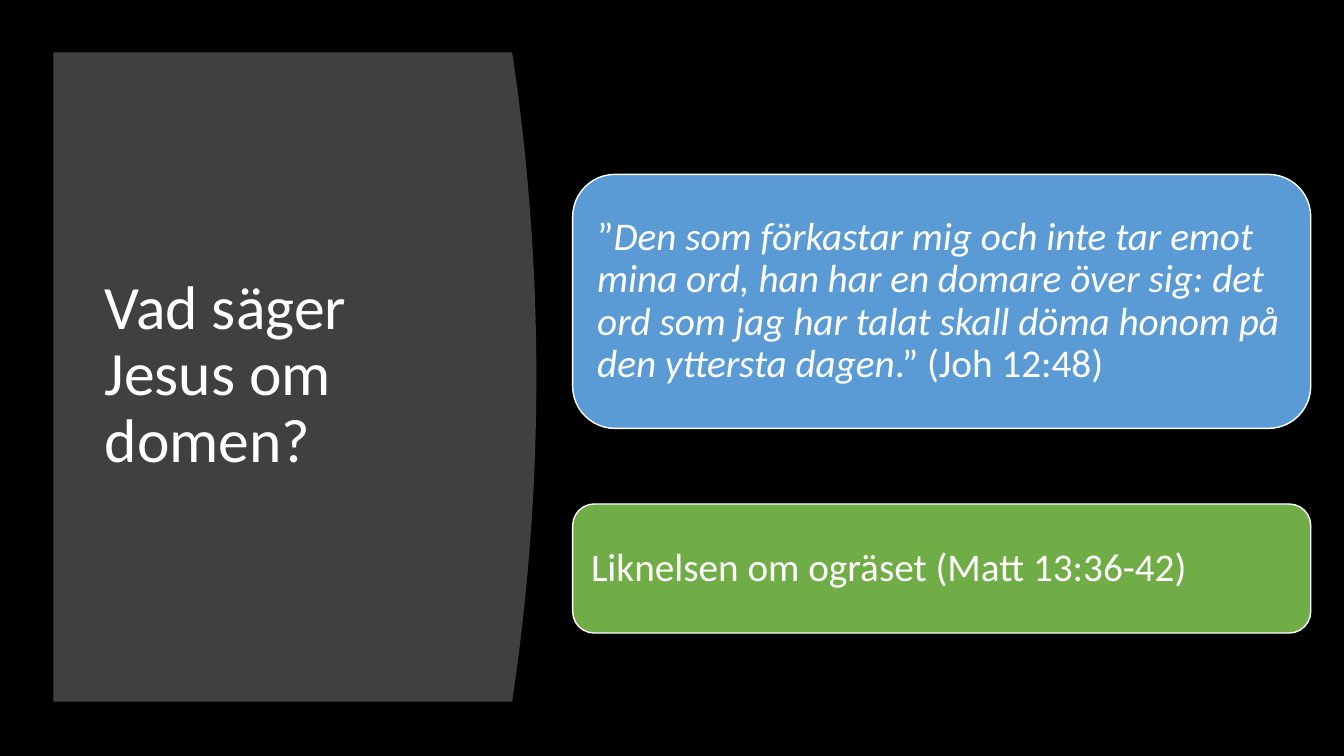
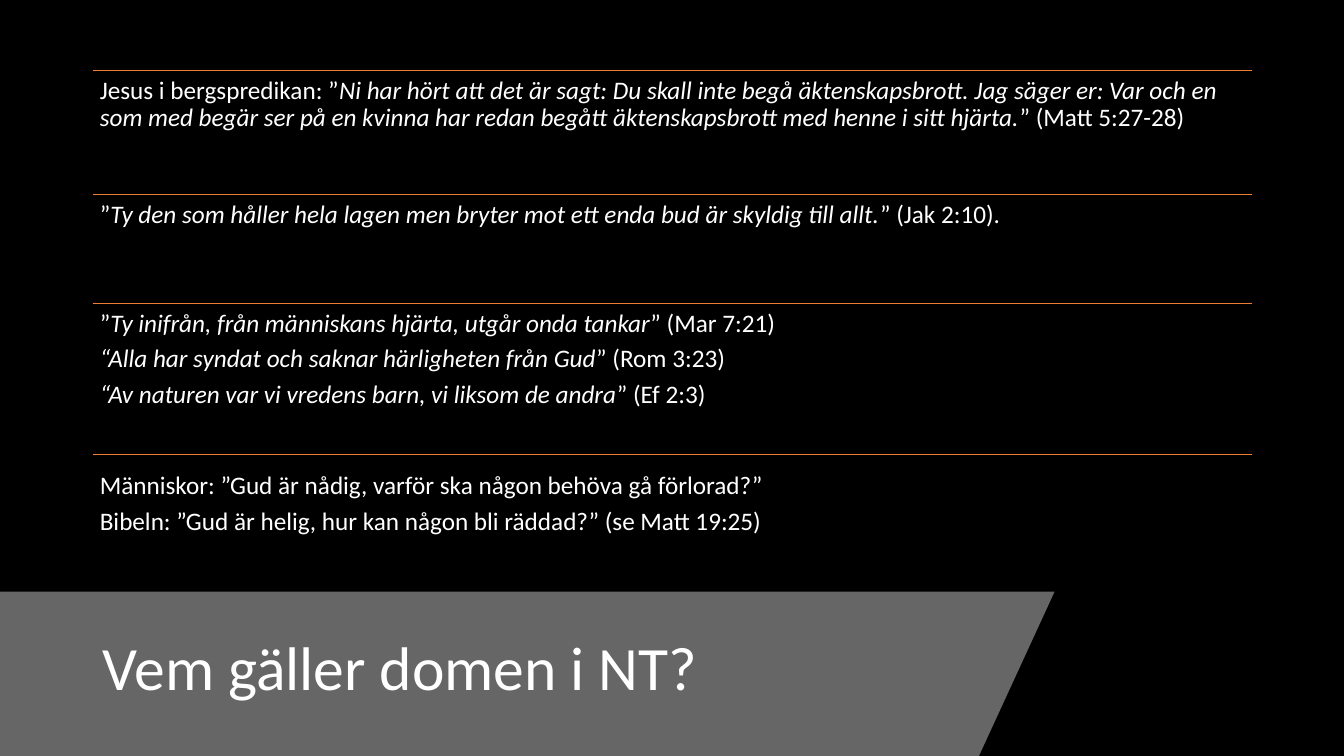
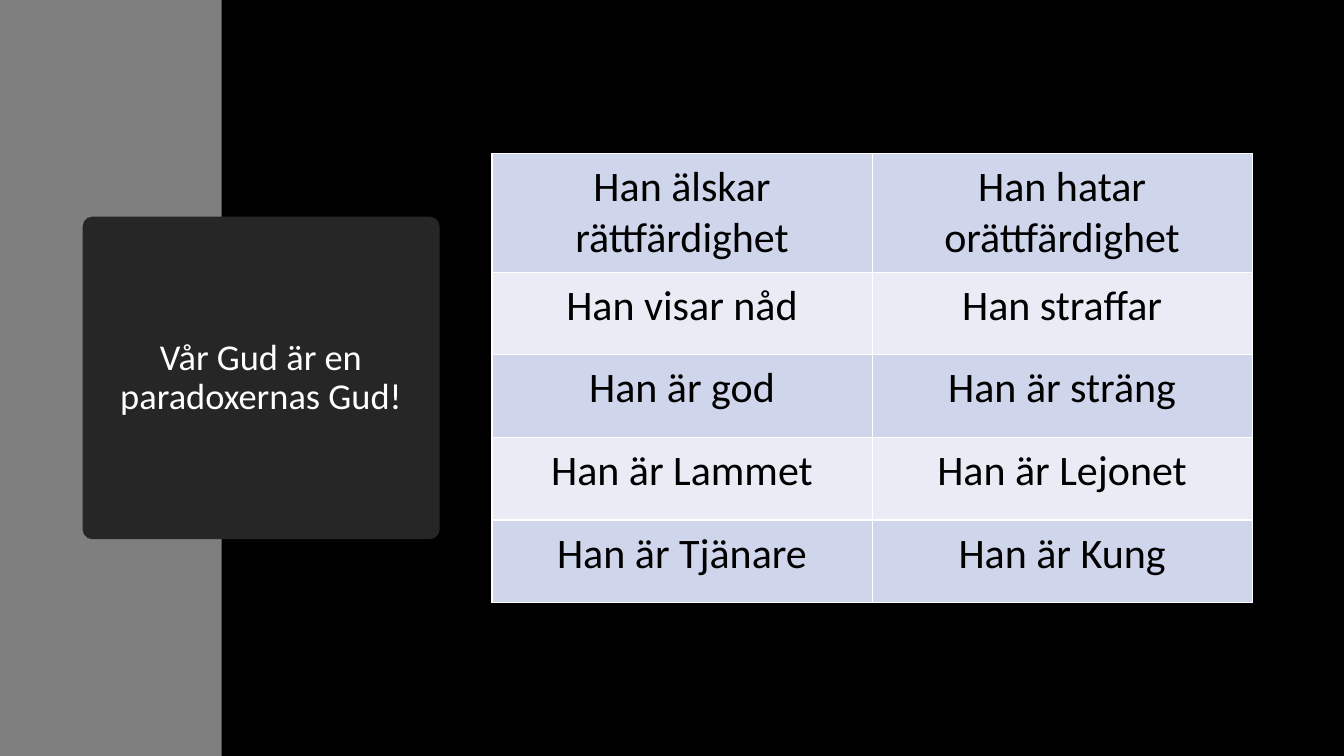
"""Build three dark slides about judgement and paradox in the Bible."""
from lxml.etree import SubElement
from pptx import Presentation
from pptx.dml.color import RGBColor
from pptx.enum.shapes import MSO_CONNECTOR, MSO_SHAPE
from pptx.enum.text import MSO_ANCHOR, PP_ALIGN
from pptx.oxml.ns import qn
from pptx.util import Inches, Pt

FONT = "Calibri"
COLORS = {
    "background": "000000", "text": "FFFFFF", "cell_text": "000000",
    "panel": "404040", "band": "666666", "strip": "7F7F7F", "card": "262626",
    "blue": "5B9BD5", "green": "70AD47", "rule": "ED7D31", "border": "FFFFFF",
    "odd_row": "CFD5EA", "even_row": "E9EBF5",
}

JESUS_TITLE = "Vad säger Jesus om domen?"
JESUS_CARDS = [
    (1.73, 2.52, "blue",
     "”*Den som förkastar mig och inte tar emot mina ord, han har en domare över sig: "
     "det ord som jag har talat skall döma honom på den yttersta dagen*.” (Joh 12:48)"),
    (5, 1.28, "green", "Liknelsen om ogräset (Matt 13:36-42)"),
]

WHO_TITLE = "Vem gäller domen i NT?"
WHO_SECTIONS = [
    (0.7, 0.7, [
        "Jesus i bergspredikan: ”*Ni har hört att det är sagt: Du skall inte begå "
        "äktenskapsbrott. Jag säger er: Var och en som med begär ser på en kvinna har "
        "redan begått äktenskapsbrott med henne i sitt hjärta.*” (Matt 5:27-28)"]),
    (1.93, 1.93, [
        "”*Ty den som håller hela lagen men bryter mot ett enda bud är skyldig till "
        "allt.*” (Jak 2:10)."]),
    (3.01, 3.01, [
        "”*Ty inifrån, från människans hjärta, utgår onda tankar*” (Mar 7:21)",
        "*“Alla har syndat och saknar härligheten från Gud*” (Rom 3:23)",
        "*“Av naturen var vi vredens barn, vi liksom de andra*” (Ef 2:3)"]),
    (4.51, 4.62, [
        "Människor: ”Gud är nådig, varför ska någon behöva gå förlorad?”",
        "Bibeln: ”Gud är helig, hur kan någon bli räddad?” (se Matt 19:25)"]),
]

PARADOX_TITLE = "Vår Gud är en paradoxernas Gud!"
PARADOXES = [
    ("Han älskar rättfärdighet", "Han hatar orättfärdighet"),
    ("Han visar nåd", "Han straffar"),
    ("Han är god", "Han är sträng"),
    ("Han är Lammet", "Han är Lejonet"),
    ("Han är Tjänare", "Han är Kung"),
]


def color(name):
    return RGBColor.from_string(COLORS[name])


def add_page(deck):
    page = deck.slides.add_slide(deck.slide_layouts[6])
    page.background.fill.solid()
    page.background.fill.fore_color.rgb = color("background")
    return page


def paint(shape, fill, line=None):
    shape.shadow.inherit = False
    shape.fill.solid()
    shape.fill.fore_color.rgb = color(fill)
    if line:
        shape.line.color.rgb = color(line)
        shape.line.width = Pt(1)
    else:
        shape.line.fill.background()
    return shape


def add_block(page, kind, place, fill, line=None):
    return paint(page.shapes.add_shape(kind, *map(Inches, place)), fill, line)


def add_outline(page, points, fill):
    corners = [(Inches(x), Inches(y)) for x, y in points]
    builder = page.shapes.build_freeform(*corners[0])
    builder.add_line_segments(corners[1:])
    return paint(builder.convert_to_shape(), fill)


def style(para, size, align, ink="text"):
    para.alignment = align
    para.font.name = FONT
    para.font.size = Pt(size)
    para.font.color.rgb = color(ink)


def write(shape, texts, size, insets=(0.1, 0.05), anchor=MSO_ANCHOR.MIDDLE,
          align=PP_ALIGN.LEFT, after=0):
    """Fill a shape with paragraphs, where asterisks enclose italics."""
    frame = shape.text_frame
    frame.word_wrap = True
    frame.vertical_anchor = anchor
    frame.margin_left = frame.margin_right = Inches(insets[0])
    frame.margin_top = frame.margin_bottom = Inches(insets[1])
    for index, text in enumerate(texts):
        para = frame.add_paragraph() if index else frame.paragraphs[0]
        style(para, size, align)
        para.line_spacing = 0.9
        para.space_after = Pt(after)
        for part, words in enumerate(text.split("*")):
            if words:
                span = para.add_run()
                span.text = words
                if part % 2:
                    span.font.italic = True


def add_text(page, place, texts, size, **options):
    write(page.shapes.add_textbox(*map(Inches, place)), texts, size, **options)


def add_rule(page, left, right, top):
    rule = page.shapes.add_connector(
        MSO_CONNECTOR.STRAIGHT, *map(Inches, (left, top, right, top)))
    rule.line.color.rgb = color("rule")
    rule.line.width = Pt(1)
    SubElement(rule._element.spPr, qn("a:effectLst"))


def border_cell(cell):
    properties = cell._tc.get_or_add_tcPr()
    for index, side in enumerate(("a:lnL", "a:lnR", "a:lnT", "a:lnB")):
        line = properties.makeelement(qn(side), {"w": str(Pt(1))})
        fill = SubElement(line, qn("a:solidFill"))
        SubElement(fill, qn("a:srgbClr"), val=COLORS["border"])
        properties.insert(index, line)


def build_jesus(deck):
    page = add_page(deck)
    left, top, edge, bottom, bulge, steps = 0.53, 0.52, 5.08, 6.96, 0.24, 40
    curve = []
    for step in range(steps + 1):
        share = step / steps
        curve.append((edge + bulge * 4 * share * (1 - share), top + (bottom - top) * share))
    add_outline(page, [(left, top), *curve, (left, bottom), (left, top)], "panel")
    add_text(page, (0.94, 1.11, 3.74, 5.24), [JESUS_TITLE], 44)
    for card_top, height, fill, text in JESUS_CARDS:
        card = add_block(page, MSO_SHAPE.ROUNDED_RECTANGLE,
                         (5.68, card_top, 7.32, height), fill, "border")
        write(card, [text], 28, insets=(0.12, 0.12))


def build_who(deck):
    page = add_page(deck)
    add_outline(page, [(0, 5.87), (10.46, 5.87), (9.71, 7.5), (0, 7.5), (0, 5.87)], "band")
    add_text(page, (0.92, 6.05, 8.83, 1.2), [WHO_TITLE], 44)
    left, width = 0.92, 11.5
    for rule_top, text_top, texts in WHO_SECTIONS:
        add_rule(page, left, left + width, rule_top)
        add_text(page, (left, text_top, width, 1.23), texts, 18,
                 insets=(0.07, 0.07), anchor=MSO_ANCHOR.TOP, after=6)


def build_paradox(deck):
    page = add_page(deck)
    add_block(page, MSO_SHAPE.RECTANGLE, (0, 0, 2.2, 7.5), "strip")
    card = add_block(page, MSO_SHAPE.ROUNDED_RECTANGLE, (0.82, 2.15, 3.54, 3.2), "card")
    card.adjustments[0] = 0.03
    write(card, [PARADOX_TITLE], 26, insets=(0.2, 0.1), align=PP_ALIGN.CENTER)

    table = page.shapes.add_table(
        len(PARADOXES), 2, *map(Inches, (4.88, 1.52, 7.54, 4.46))).table
    table.first_row = table.horz_banding = False
    for column in table.columns:
        column.width = Inches(3.77)
    for index, texts in enumerate(PARADOXES):
        table.rows[index].height = Inches(0.82 if index else 1.18)
        for cell, text in zip(table.rows[index].cells, texts):
            cell.text = text
            cell.margin_left = cell.margin_right = Inches(0.16)
            cell.margin_top = cell.margin_bottom = Inches(0.08)
            cell.fill.solid()
            cell.fill.fore_color.rgb = color("even_row" if index % 2 else "odd_row")
            style(cell.text_frame.paragraphs[0], 30, PP_ALIGN.CENTER, "cell_text")
            border_cell(cell)


def main():
    deck = Presentation()
    deck.slide_width, deck.slide_height = Inches(13.33), Inches(7.5)
    for build in (build_jesus, build_who, build_paradox):
        build(deck)
    deck.save("out.pptx")


if __name__ == "__main__":
    main()
